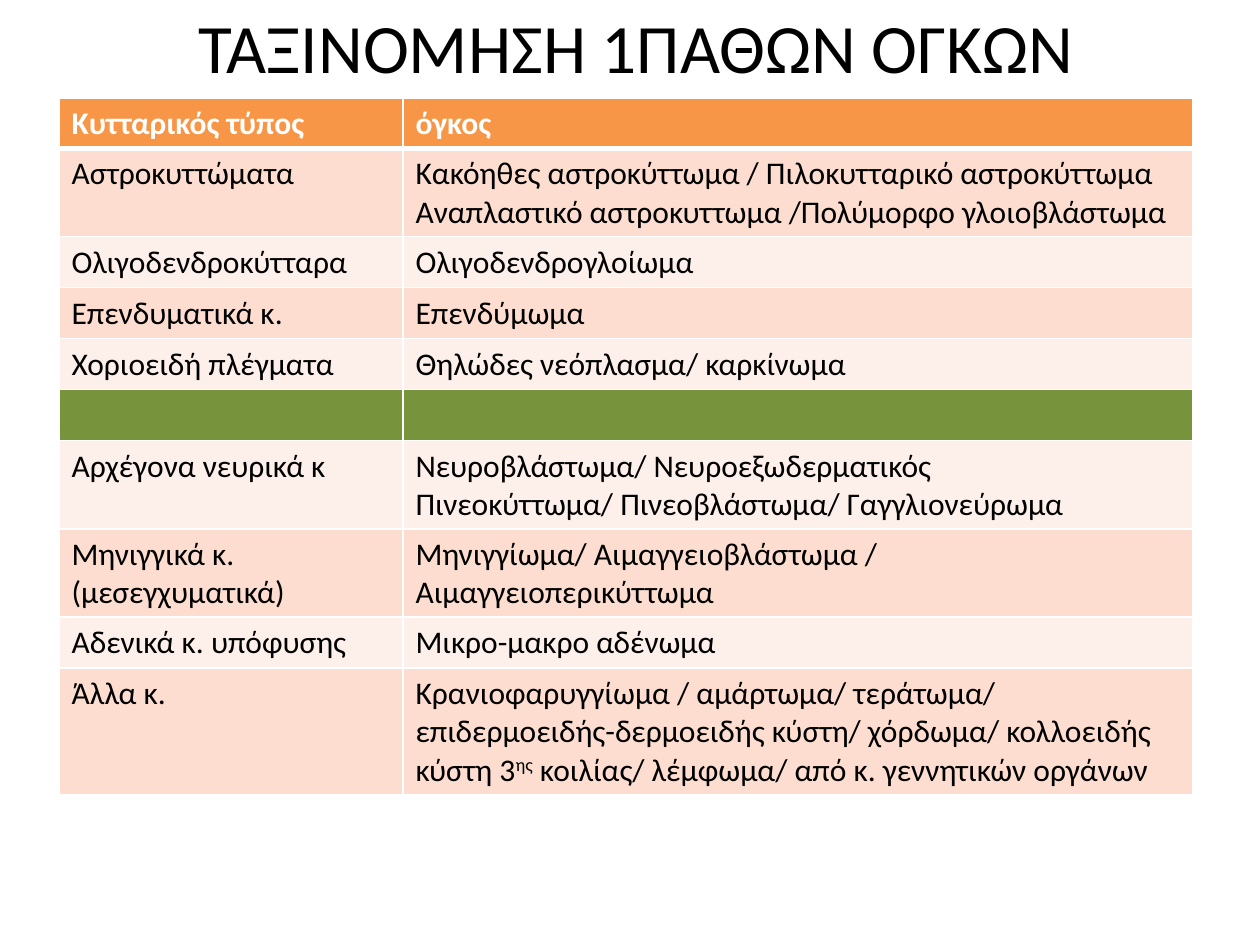
from typing import NamedTuple

from lxml.etree import SubElement
from pptx import Presentation
from pptx.dml.color import RGBColor
from pptx.enum.text import MSO_ANCHOR as Anchor, PP_ALIGN as Align
from pptx.oxml.ns import qn
from pptx.util import Emu, Pt

PX_PER_INCH = 126
FONT = "Calibri"
COLORS = {
    "text": "000000",
    "white": "FFFFFF",
    "header": "F79646",
    "dark_band": "FCDDCF",
    "light_band": "FDEFE9",
    "divider": "77933C",
}


class Row(NamedTuple):
    cell_type: str
    tumours: tuple[str, ...]
    fill: str = ""


# A caret pair marks superscript text.
ROWS = [
    Row("Κυτταρικός τύπος", ("όγκος",), "header"),
    Row("Αστροκυττώματα", ("Κακόηθες αστροκύττωμα / Πιλοκυτταρικό αστροκύττωμα",
                           "Αναπλαστικό αστροκυττωμα /Πολύμορφο γλοιοβλάστωμα")),
    Row("Ολιγοδενδροκύτταρα", ("Ολιγοδενδρογλοίωμα",)),
    Row("Επενδυματικά κ.", ("Επενδύμωμα",)),
    Row("Χοριοειδή πλέγματα", ("Θηλώδες νεόπλασμα/ καρκίνωμα",)),
    Row("", ("",), "divider"),
    Row("Αρχέγονα νευρικά κ", ("Νευροβλάστωμα/ Νευροεξωδερματικός",
                               "Πινεοκύττωμα/ Πινεοβλάστωμα/ Γαγγλιονεύρωμα")),
    Row("Μηνιγγικά κ. (μεσεγχυματικά)",
        ("Μηνιγγίωμα/ Αιμαγγειοβλάστωμα / Αιμαγγειοπερικύττωμα",)),
    Row("Αδενικά κ. υπόφυσης", ("Μικρο-μακρο αδένωμα",)),
    Row("Άλλα κ.", ("Κρανιοφαρυγγίωμα / αμάρτωμα/ τεράτωμα/ "
                    "επιδερμοειδής-δερμοειδής κύστη/ χόρδωμα/ κολλοειδής "
                    "κύστη 3^ης^ κοιλίας/ λέμφωμα/ από κ. γεννητικών οργάνων",)),
]


def px(length: int) -> Emu:
    return Emu(round(length * 914400 / PX_PER_INCH))


def rgb(name: str) -> RGBColor:
    return RGBColor.from_string(COLORS[name])


def style(para, size: float, color: str, bold: bool = False) -> None:
    font = para.font
    font.name, font.size, font.bold = FONT, Pt(size), bold
    font.color.rgb = rgb(color)


def add_borders(cell, bottom: int) -> None:
    properties = cell._tc.get_or_add_tcPr()
    widths = {"lnL": 1, "lnR": 1, "lnT": 1, "lnB": bottom}
    for position, (side, width) in enumerate(widths.items()):
        line = SubElement(properties, qn(f"a:{side}"), w=str(Pt(width)))
        fill = SubElement(line, qn("a:solidFill"))
        SubElement(fill, qn("a:srgbClr"), val=COLORS["white"])
        properties.insert(position, line)


def fill_cell(cell, lines: tuple[str, ...], fill: str) -> None:
    is_header = fill == "header"
    cell.fill.solid()
    cell.fill.fore_color.rgb = rgb(fill)
    add_borders(cell, bottom=3 if is_header else 1)
    frame = cell.text_frame
    for number, line in enumerate(lines):
        para = frame.add_paragraph() if number else frame.paragraphs[0]
        style(para, 18, "white" if is_header else "text", is_header)
        for part, text in enumerate(line.split("^")):
            if not text:
                continue
            span = para.add_run()
            span.text = text
            if part % 2:
                span._r.get_or_add_rPr().set("baseline", "30000")


def add_title(page, text: str) -> None:
    box = page.shapes.add_textbox(px(69), px(0), px(1134), px(91))
    frame = box.text_frame
    frame.word_wrap = True
    frame.vertical_anchor = Anchor.MIDDLE
    para = frame.paragraphs[0]
    para.text = text
    para.alignment = Align.CENTER
    style(para, 39.6, "text")


def add_tumour_table(page) -> None:
    frame = page.shapes.add_table(len(ROWS), 2, px(59), px(98), px(1134), px(506))
    table = frame.table
    for column, width in zip(table.columns, (344, 790)):
        column.width = px(width)
    for number, row in enumerate(ROWS):
        table.rows[number].height = px(51 if number else 42)
        fill = row.fill or ("dark_band" if number % 2 else "light_band")
        fill_cell(table.cell(number, 0), (row.cell_type,), fill)
        fill_cell(table.cell(number, 1), row.tumours, fill)


def main() -> None:
    deck = Presentation()
    deck.slide_width, deck.slide_height = px(1260), px(945)
    page = deck.slides.add_slide(deck.slide_layouts[6])
    add_title(page, "ΤΑΞΙΝΟΜΗΣΗ 1ΠΑΘΩΝ ΟΓΚΩΝ")
    add_tumour_table(page)
    deck.save("out.pptx")


if __name__ == "__main__":
    main()
